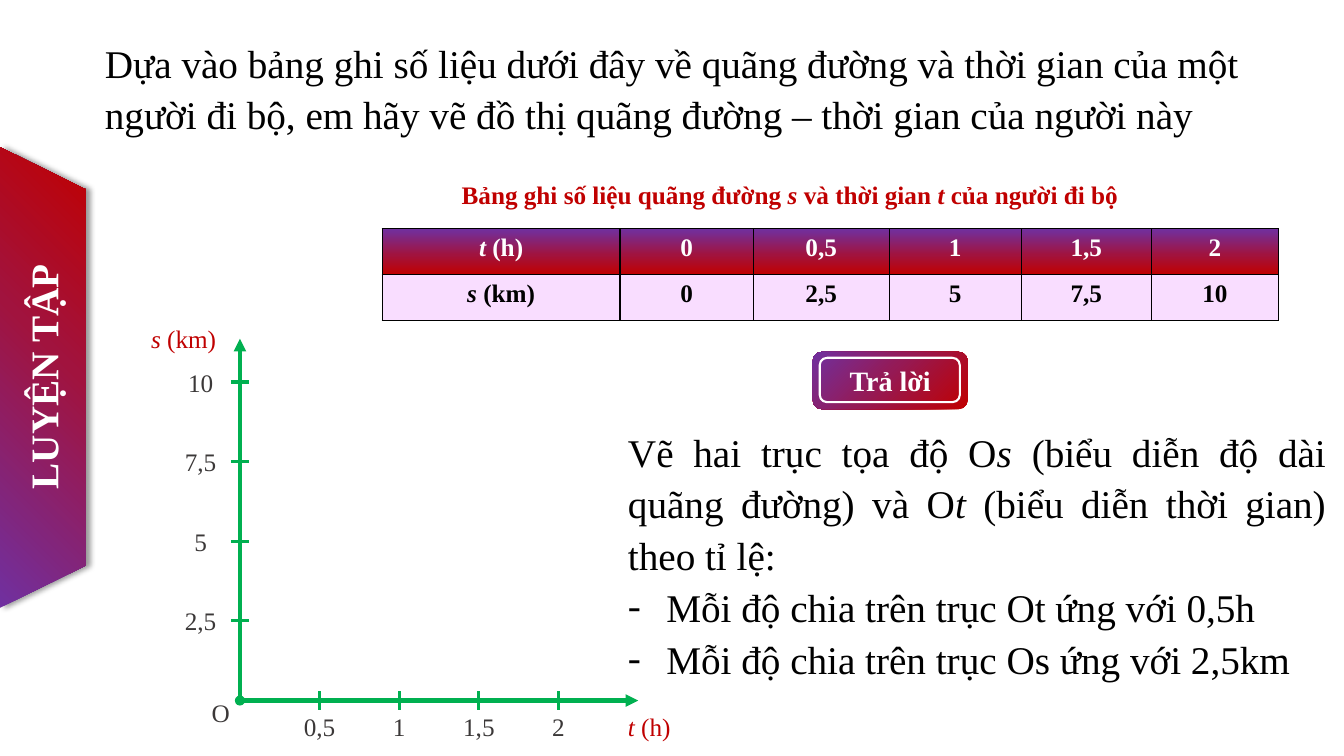
from lxml.etree import SubElement
from pptx import Presentation
from pptx.dml.color import RGBColor
from pptx.enum.shapes import MSO_CONNECTOR, MSO_SHAPE
from pptx.enum.text import MSO_ANCHOR, MSO_AUTO_SIZE, PP_ALIGN
from pptx.oxml import parse_xml
from pptx.oxml.ns import nsdecls, qn
from pptx.util import Inches, Pt

FONT = "Times New Roman"
BLACK = RGBColor(0x00, 0x00, 0x00)
WHITE = RGBColor(0xFF, 0xFF, 0xFF)
RED = RGBColor(0xC0, 0x00, 0x00)
WINE = RGBColor(0xA1, 0x13, 0x3E)
PLUM = RGBColor(0x95, 0x1A, 0x56)
PURPLE = RGBColor(0x70, 0x30, 0xA0)
GREEN = RGBColor(0x00, 0xB0, 0x50)
GREY = RGBColor(0x3B, 0x38, 0x38)
PINK = RGBColor(0xF9, 0xDD, 0xFF)
PURPLE_TO_RED = [(0, PURPLE), (57, WINE), (100, RED)]
RED_TO_PURPLE = [(0, RED), (54, PLUM), (100, PURPLE)]


def write_text(frame, *paragraphs, size=18, color=BLACK, bold=False,
               align=PP_ALIGN.LEFT, spacing=None, anchor=MSO_ANCHOR.TOP):
    frame.word_wrap = True
    frame.vertical_anchor = anchor
    for index, runs in enumerate(paragraphs):
        paragraph = frame.add_paragraph() if index else frame.paragraphs[0]
        paragraph.alignment = align
        if spacing:
            paragraph.line_spacing = spacing
        for text, italic in [(runs, False)] if isinstance(runs, str) else runs:
            run = paragraph.add_run()
            run.text = text
            run.font.name = FONT
            run.font.size = Pt(size)
            run.font.bold = bold
            run.font.italic = italic
            run.font.color.rgb = color


def add_text(slide, left, top, width, height, *paragraphs, **text_format):
    box = slide.shapes.add_textbox(Inches(left), Inches(top), Inches(width), Inches(height))
    write_text(box.text_frame, *paragraphs, **text_format)
    box.text_frame.auto_size = MSO_AUTO_SIZE.SHAPE_TO_FIT_TEXT
    return box


def add_shape(slide, kind, left, top, width, height):
    shape = slide.shapes.add_shape(
        kind, Inches(left), Inches(top), Inches(width), Inches(height))
    shape.shadow.inherit = False
    shape.line.fill.background()
    return shape


def fill_gradient(fill, properties, stops, angle):
    fill.gradient()
    fill.gradient_angle = (360 - angle) % 360
    stop_list = properties.find(qn("a:gradFill")).find(qn("a:gsLst"))
    stop_list.clear()
    for position, color in stops:
        stop = SubElement(stop_list, qn("a:gs"), pos=str(position * 1000))
        SubElement(stop, qn("a:srgbClr"), val=str(color))


def add_line(slide, start_x, start_y, end_x, end_y, width, arrow=False):
    line = slide.shapes.add_connector(
        MSO_CONNECTOR.STRAIGHT,
        Inches(start_x), Inches(start_y), Inches(end_x), Inches(end_y))
    line.line.color.rgb = GREEN
    line.line.width = Pt(width)
    properties = line.element.spPr
    if arrow:
        SubElement(properties.find(qn("a:ln")), qn("a:tailEnd"), type="triangle")
    SubElement(properties, qn("a:effectLst"))


def add_side_tab(slide, left, top, width, height):
    tab = add_shape(slide, MSO_SHAPE.TRAPEZOID, left + (width - height) / 2,
                    top + (height - width) / 2, height, width)
    tab.rotation = 90
    tab.adjustments[0] = 0.493
    properties = tab.element.spPr
    fill_gradient(tab.fill, properties, PURPLE_TO_RED, 225)
    properties.find(qn("a:effectLst")).append(parse_xml(
        f'<a:outerShdw {nsdecls("a")} blurRad="50800" dist="38100" dir="0" '
        'algn="l" rotWithShape="0"><a:srgbClr val="000000">'
        '<a:alpha val="40000"/></a:srgbClr></a:outerShdw>'))
    label_width, label_height = 2.59, 0.57
    label = add_text(slide, left + width / 2 - label_width / 2,
                     top + height / 2 - 0.09 - label_height / 2,
                     label_width, label_height,
                     "LUYỆN TẬP", size=28, color=WHITE, bold=True)
    label.rotation = 270


def add_question(slide, left, top, width, height):
    title = slide.shapes.title
    title.left, title.top = Inches(left), Inches(top)
    title.width, title.height = Inches(width), Inches(height)
    write_text(title.text_frame,
               "Dựa vào bảng ghi số liệu dưới đây về quãng đường và thời gian của một "
               "người đi bộ, em hãy vẽ đồ thị quãng đường – thời gian của người này",
               size=28, spacing=1.1)
    title.text_frame.auto_size = MSO_AUTO_SIZE.NONE


def add_border(cell):
    properties = cell._tc.get_or_add_tcPr()
    for index, side in enumerate(["lnL", "lnR", "lnT", "lnB"]):
        properties.insert(index, parse_xml(
            f'<a:{side} {nsdecls("a")} w="12700"><a:solidFill>'
            f'<a:srgbClr val="{BLACK}"/></a:solidFill></a:{side}>'))


def add_data_table(slide, left, top, width, height):
    add_text(slide, left + 0.69, top - 0.54, 7.09, 0.4,
             [("Bảng ghi số liệu quãng đường ", False), ("s", True),
              (" và thời gian ", False), ("t", True), (" của người đi bộ", False)],
             color=RED, bold=True)
    rows = [
        [[("t", True), (" (h)", False)], "0", "0,5", "1", "1,5", "2"],
        [[("s", True), (" (km)", False)], "0", "2,5", "5", "7,5", "10"],
    ]
    column_widths = [2.36, 1.32, 1.35, 1.31, 1.29, 1.26]
    table = slide.shapes.add_table(
        len(rows), len(column_widths),
        Inches(left), Inches(top), Inches(width), Inches(height)).table
    for column, column_width in zip(table.columns, column_widths):
        column.width = Inches(column_width)
    for row_index, row in enumerate(rows):
        for column_index, content in enumerate(row):
            cell = table.cell(row_index, column_index)
            write_text(cell.text_frame, content, bold=True, align=PP_ALIGN.CENTER,
                       color=BLACK if row_index else WHITE)
            if row_index:
                cell.fill.solid()
                cell.fill.fore_color.rgb = PINK
            else:
                fill_gradient(cell.fill, cell._tc.get_or_add_tcPr(), PURPLE_TO_RED, 90)
            add_border(cell)


def add_answer_button(slide, left, top, width, height):
    button = add_shape(slide, MSO_SHAPE.ROUNDED_RECTANGLE, left, top, width, height)
    fill_gradient(button.fill, button.element.spPr, RED_TO_PURPLE, 225)
    write_text(button.text_frame, "Trả lời", size=20, color=WHITE, bold=True,
               align=PP_ALIGN.CENTER, anchor=MSO_ANCHOR.MIDDLE)
    frame = add_shape(slide, MSO_SHAPE.ROUNDED_RECTANGLE, left + 0.07, top + 0.06,
                      width - 0.15, height - 0.13)
    frame.fill.background()
    frame.line.color.rgb = WHITE
    frame.line.width = Pt(1.5)


def add_axes(slide, left, top, width, height):
    bottom = top + height
    step, half_tick, dot = 0.79, 0.09, 0.1
    add_line(slide, left, bottom, left, top, 3, arrow=True)
    add_line(slide, left, bottom, left + width, bottom, 3, arrow=True)
    origin = add_shape(slide, MSO_SHAPE.OVAL, left - dot / 2, bottom - dot / 2, dot, dot)
    origin.fill.solid()
    origin.fill.fore_color.rgb = GREEN
    add_text(slide, left - 0.38, bottom - 0.08, 0.36, 0.4, "O", color=GREY)
    add_text(slide, left + width - 0.2, bottom + 0.06, 0.73, 0.4,
             [("t ", True), ("(h)", False)], color=RED)
    add_text(slide, left - 0.98, top - 0.2, 0.9, 0.4,
             [("s ", True), ("(km)", False)], color=RED)
    ticks = zip(["0,5", "1", "1,5", "2"], ["2,5", "5", "7,5", "10"])
    for index, (time, distance) in enumerate(ticks, 1):
        x, y = left + index * step, bottom - index * step
        add_line(slide, x, bottom - half_tick, x, bottom + half_tick, 2.25)
        add_text(slide, x - 0.32, bottom + 0.06, 0.64, 0.4, time,
                 color=GREY, align=PP_ALIGN.CENTER)
        add_line(slide, left - half_tick, y, left + half_tick, y, 2.25)
        add_text(slide, left - 0.71, y - 0.2, 0.64, 0.4, distance,
                 color=GREY, align=PP_ALIGN.CENTER)


def add_answer(slide, left, top, width, height):
    answer = add_text(
        slide, left, top, width, height,
        [("Vẽ hai trục tọa độ O", False), ("s", True),
         (" (biểu diễn độ dài quãng đường) và O", False), ("t", True),
         (" (biểu diễn thời gian) theo tỉ lệ:", False)],
        "Mỗi độ chia trên trục Ot ứng với 0,5h",
        "Mỗi độ chia trên trục Os ứng với 2,5km",
        size=28, align=PP_ALIGN.JUSTIFY, spacing=1.1)
    for paragraph in answer.text_frame.paragraphs[1:]:
        properties = paragraph._p.get_or_add_pPr()
        properties.set("marL", str(Inches(0.38)))
        properties.set("indent", str(-Inches(0.38)))
        SubElement(properties, qn("a:buFont"), typeface=FONT)
        SubElement(properties, qn("a:buChar"), char="-")


def main():
    presentation = Presentation()
    presentation.slide_width = Inches(13.33)
    presentation.slide_height = Inches(7.5)
    slide = presentation.slides.add_slide(presentation.slide_layouts[5])
    add_side_tab(slide, 0, 1.46, 0.85, 4.57)
    add_question(slide, 0.94, 0.29, 12.14, 1.1)
    add_data_table(slide, 3.79, 2.27, 8.89, 0.91)
    add_answer_button(slide, 8.06, 3.49, 1.54, 0.57)
    add_axes(slide, 2.38, 3.36, 3.95, 3.59)
    add_answer(slide, 6.13, 4.15, 7.12, 2.66)
    presentation.save("out.pptx")


if __name__ == "__main__":
    main()
